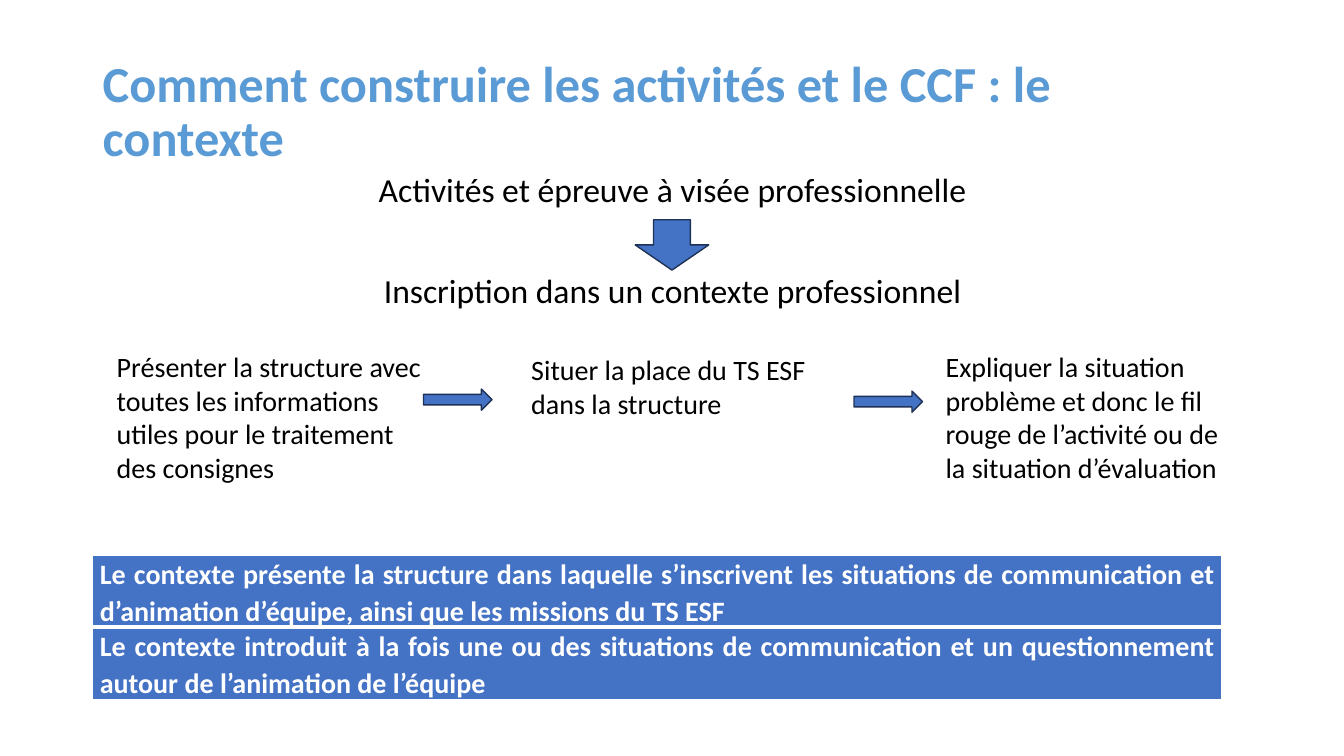
from lxml import etree
from pptx import Presentation
from pptx.dml.color import RGBColor
from pptx.enum import shapes, text
from pptx.oxml import ns
from pptx.util import Inches, Pt

HUES = {"title": "5B9BD5", "fill": "4472C4", "edge": "1E3256",
        "ink": "000000", "white": "FFFFFF"}
FONT = "Calibri"
ALIGN = text.PP_ALIGN

STEPS = [
    (1.06, 3.42, 3.26, 1.75, "Présenter la structure avec toutes les informations "
     "utiles pour le traitement des consignes"),
    (5.17, 3.45, 2.99, 1.08, "Situer la place du TS ESF dans la structure"),
    (9.28, 3.42, 2.99, 1.75, "Expliquer la situation problème et donc le fil rouge "
     "de l’activité ou de la situation d’évaluation"),
]
NOTES = [
    "Le contexte présente la structure dans laquelle s’inscrivent les situations "
    "de communication et d’animation d’équipe, ainsi que les missions du TS ESF",
    "Le contexte introduit à la fois une ou des situations de communication "
    "et un questionnement autour de l’animation de l’équipe",
]


def color(name):
    return RGBColor.from_string(HUES[name])


def add_run(para, words, size, hue="ink", bold=False):
    run = para.add_run()
    run.text = words
    font = run.font
    font.name, font.size, font.bold = FONT, Pt(size), bold
    font.color.rgb = color(hue)


def add_text(slide, box, lines, size, hue="ink", bold=False, align=ALIGN.LEFT,
             spacing=1.0, gap=0, anchor=text.MSO_ANCHOR.TOP):
    frame = slide.shapes.add_textbox(*map(Inches, box)).text_frame
    frame.word_wrap = True
    frame.vertical_anchor = anchor
    for i, words in enumerate(lines):
        para = frame.add_paragraph() if i else frame.paragraphs[0]
        para.alignment = align
        para.line_spacing = spacing
        if i:
            para.space_before = Pt(gap)
        add_run(para, words, size, hue, bold)


def add_arrow(slide, kind, box):
    arrow = slide.shapes.add_shape(kind, *map(Inches, box))
    arrow.shadow.inherit = False
    arrow.fill.solid()
    arrow.fill.fore_color.rgb = color("fill")
    arrow.line.color.rgb = color("edge")
    arrow.line.width = Pt(1)


def set_edges(cell, top, bottom):
    props = cell._tc.get_or_add_tcPr()
    for side, width in (("L", 1), ("R", 1), ("T", top), ("B", bottom)):
        line = etree.SubElement(props, ns.qn("a:ln" + side), w=str(Pt(width)))
        fill = etree.SubElement(line, ns.qn("a:solidFill"))
        etree.SubElement(fill, ns.qn("a:srgbClr"), val=HUES["white"])


def add_notes(slide, box, notes):
    table = slide.shapes.add_table(len(notes), 1, *map(Inches, box)).table
    table.first_row = table.horz_banding = False
    last = len(notes) - 1
    for i, words in enumerate(notes):
        cell = table.cell(i, 0)
        set_edges(cell, 3 if i else 1, 1 if i == last else 3)
        cell.fill.solid()
        cell.fill.fore_color.rgb = color("fill")
        cell.margin_left = cell.margin_right = Inches(0.07)
        cell.margin_top = cell.margin_bottom = 0
        para = cell.text_frame.paragraphs[0]
        para.alignment = ALIGN.JUSTIFY
        para.line_spacing = 1.07
        para.space_after = Pt(8)
        add_run(para, words, 20, "white", True)


def main():
    deck = Presentation()
    deck.slide_width, deck.slide_height = Inches(13.33), Inches(7.5)
    slide = deck.slides.add_slide(deck.slide_layouts[6])
    kinds = shapes.MSO_SHAPE

    add_text(slide, (0.92, 0.4, 11.5, 1.45),
             ["Comment construire les activités et le CCF : le contexte"],
             36, "title", True, spacing=0.9, anchor=text.MSO_ANCHOR.MIDDLE)
    add_text(slide, (0.92, 1.67, 11.5, 1.75),
             ["Activités et épreuve à visée professionnelle",
              "Inscription dans un contexte professionnel"],
             24, align=ALIGN.CENTER, spacing=0.9, gap=46.4)
    add_arrow(slide, kinds.DOWN_ARROW, (6.3, 2.18, 0.73, 0.5))
    add_notes(slide, (0.92, 5.51, 11.2, 1.4), NOTES)
    for *box, words in STEPS:
        add_text(slide, box, [words], 20)
    for left, top in ((4.2, 3.86), (8.47, 3.88)):
        add_arrow(slide, kinds.RIGHT_ARROW, (left, top, 0.68, 0.21))
    deck.save("out.pptx")


if __name__ == "__main__":
    main()
